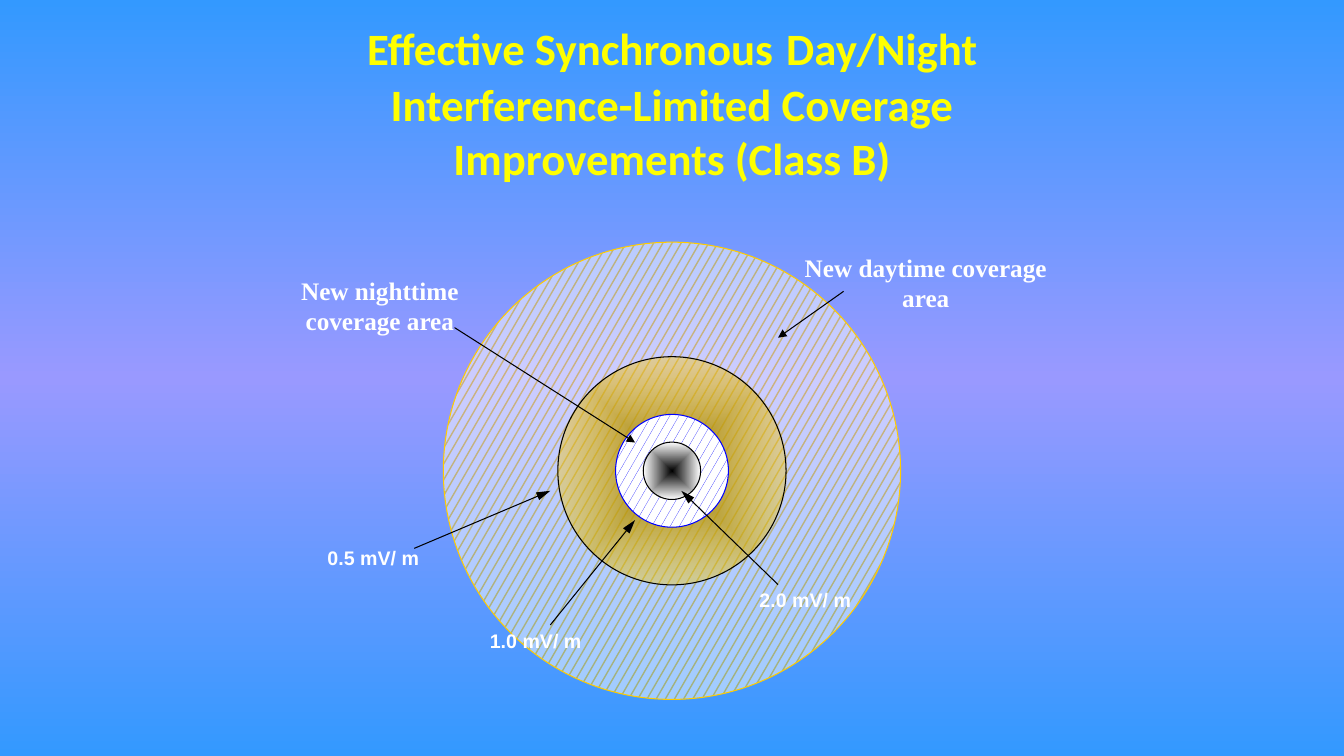
from copy import deepcopy

from lxml import etree
from pptx import Presentation
from pptx.dml.color import RGBColor
from pptx.enum.dml import MSO_PATTERN
from pptx.enum.shapes import MSO_CONNECTOR, MSO_SHAPE
from pptx.enum.text import MSO_ANCHOR, MSO_AUTO_SIZE, PP_ALIGN
from pptx.oxml.ns import qn
from pptx.util import Pt

OVAL, STRAIGHT = MSO_SHAPE.OVAL, MSO_CONNECTOR.STRAIGHT
HATCH = MSO_PATTERN.SMALL_CONFETTI
CENTER, BOTTOM, FIXED = PP_ALIGN.CENTER, MSO_ANCHOR.BOTTOM, MSO_AUTO_SIZE.NONE


class Theme:
    sky, violet = "3399FF", "9999FF"
    yellow, white, black = "FFFF00", "FFFFFF", "000000"
    gold, bronze, blue = "FFCC00", "937600", "0000FF"
    head = dict(font="Calibri", size=32, color=yellow)
    area = dict(font="Times New Roman", size=18, color=white)
    field = dict(font="Arial", size=14, color=white)
    rule = 0.75


WIDE, HIGH = 960, 540
HUB = 480, 336.3

TITLE_BOX = 174.2, 45.4, 612, 90
TITLE = [
    ("Effective Synchronous", 32),
    (" ", 40),
    ("Day/Night\nInterference-Limited Coverage Improvements (Class B)", 32),
]

# radius, line colour, hatch (colour, opacity) or None, gradient stops or None
RINGS = [
    (163.3, Theme.gold, (Theme.gold, 50), None),
    (81.5, Theme.black, None, [(0, Theme.bronze, 100), (100, Theme.gold, 38)]),
    (40.3, Theme.blue, (Theme.blue, 100), None),
    (20.5, Theme.black, None, [(0, Theme.black, 100), (100, Theme.white, 100)]),
]

# text, format, box, arrow start, arrow tip, arrowhead length
LABELS = [
    ("2.0 mV/ m", Theme.field, (473, 416.2, 204.5, 41),
     (555.8, 417.6), (486.7, 350.6), "lg"),
    ("1.0 mV/ m", Theme.field, (299.5, 445.7, 166.3, 53.3),
     (393.1, 446.4), (453.6, 371.5), "lg"),
    ("0.5 mV/ m", Theme.field, (185, 386.6, 163.4, 41),
     (295.9, 391.7), (393.1, 350.6), "lg"),
    ("New daytime coverage area", Theme.area, (561.6, 176.4, 199.4, 81.4),
     (602.6, 208.1), (555.8, 241.2), "med"),
    ("New nighttime coverage area", Theme.area, (195.8, 193, 151.2, 50.4),
     (324.7, 234), (453.6, 316.1), "med"),
]


def rgb(code):
    return RGBColor.from_string(code)


def pts(*nums):
    return [Pt(num) for num in nums]


def sub(node, tag, **attrs):
    return etree.SubElement(node, qn(tag), attrs)


def fade(node, alpha):
    if alpha < 100:
        sub(node, "a:alpha", val=str(alpha * 1000))


def shade(fill, root, stops, radial=True):
    """Fill with the stops, from the centre outwards or from top to bottom."""
    fill.gradient()
    grad = root.find(".//" + qn("a:gradFill"))
    for kid in list(grad):
        grad.remove(kid)
    group = sub(grad, "a:gsLst")
    for pos, code, alpha in stops:
        stop = sub(group, "a:gs", pos=str(pos * 1000))
        fade(sub(stop, "a:srgbClr", val=code), alpha)
    if radial:
        way = sub(grad, "a:path", path="shape")
        sub(way, "a:fillToRect", l="50000", t="50000", r="50000", b="50000")
    else:
        sub(grad, "a:lin", ang="5400000", scaled="1")


def put(par, text, font, size, color):
    """Add bold text to the paragraph, with a line break at each newline."""
    par.alignment = CENTER
    for num, part in enumerate(text.split("\n")):
        if num:
            par.add_line_break()
            par._p[-1].append(deepcopy(run._r.rPr))
        run = par.add_run()
        run.text = part
        run.font.name, run.font.size, run.font.bold = font, Pt(size), True
        run.font.color.rgb = rgb(color)


def add_title(slide):
    title = slide.shapes.title
    title.left, title.top, title.width, title.height = pts(*TITLE_BOX)
    frame = title.text_frame
    frame.auto_size, frame.vertical_anchor = FIXED, BOTTOM
    for text, size in TITLE:
        put(frame.paragraphs[0], text, **{**Theme.head, "size": size})


def add_ring(slide, radius, edge, hatch, stops):
    left, top = (mid - radius for mid in HUB)
    ring = slide.shapes.add_shape(OVAL, *pts(left, top, 2 * radius, 2 * radius))
    ring.shadow.inherit = False
    ring.line.color.rgb, ring.line.width = rgb(edge), Pt(Theme.rule)
    if stops:
        shade(ring.fill, ring._element, stops)
        return
    code, alpha = hatch
    ring.fill.patterned()
    ring.fill.pattern = HATCH
    ring.fill.fore_color.rgb, ring.fill.back_color.rgb = rgb(code), rgb(Theme.white)
    for node in ring._element.find(".//" + qn("a:pattFill")).iter(qn("a:srgbClr")):
        fade(node, alpha)


def add_arrow(slide, start, tip, length):
    arrow = slide.shapes.add_connector(STRAIGHT, *pts(*start, *tip))
    arrow.line.color.rgb, arrow.line.width = rgb(Theme.black), Pt(Theme.rule)
    sub(arrow.line._get_or_add_ln(), "a:tailEnd", type="triangle", w="med", len=length)
    sub(arrow._element.spPr, "a:effectLst")


def add_label(slide, text, style, box):
    frame = slide.shapes.add_textbox(*pts(*box)).text_frame
    frame.word_wrap = True
    put(frame.paragraphs[0], text, **style)


def main():
    deck = Presentation()
    deck.slide_width, deck.slide_height = pts(WIDE, HIGH)
    slide = deck.slides.add_slide(deck.slide_layouts[5])
    sky = [(0, Theme.sky, 100), (50, Theme.violet, 100), (100, Theme.sky, 100)]
    shade(slide.background.fill, slide._element, sky, radial=False)
    add_title(slide)
    for ring in RINGS:
        add_ring(slide, *ring)
    for text, style, box, start, tip, length in LABELS:
        add_label(slide, text, style, box)
        add_arrow(slide, start, tip, length)
    deck.save("out.pptx")


if __name__ == "__main__":
    main()
